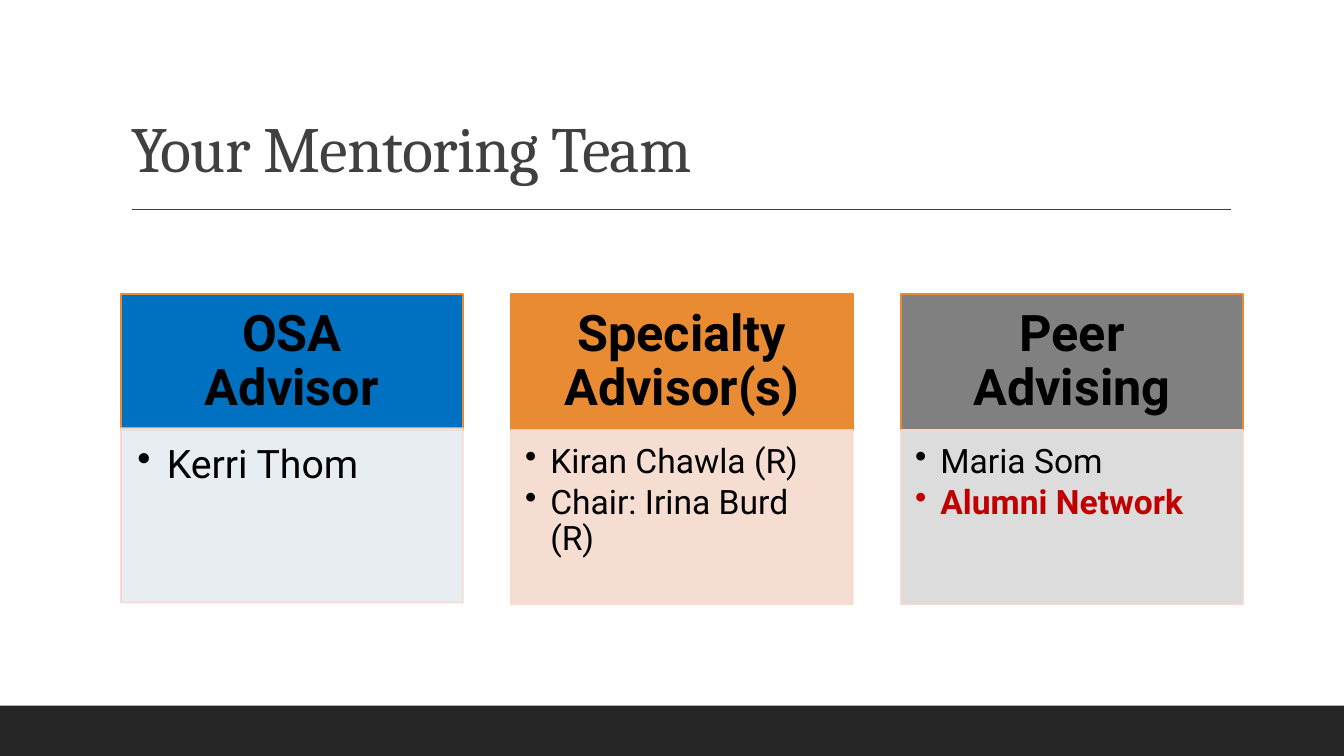
from dataclasses import dataclass

from lxml import etree
from pptx import Presentation
from pptx.dml.color import RGBColor
from pptx.enum import shapes, text
from pptx.oxml import ns
from pptx.util import Pt


@dataclass(frozen=True)
class Theme:
    title_font: str = "Cambria"
    body_font: str = "Roboto"
    title_size: float = 46
    heading_size: float = 36
    ink: str = "000000"
    title_ink: str = "404040"
    accent: str = "C00000"
    footer: str = "262626"
    orange: str = "E88B33"
    blue: str = "0070C0"
    grey: str = "808080"
    pale_orange: str = "F6DACE"
    pale_blue: str = "E5ECF0"
    pale_grey: str = "D9D9D9"


class SlideBuilder:
    def __init__(self, page, theme):
        self.page = page
        self.theme = theme

    def style(self, span, font, size, color, bold=False):
        span.font.name = font
        span.font.size = Pt(size)
        span.font.bold = bold
        span.font.color.rgb = RGBColor.from_string(color)

    def title(self, wording, left, top, width, height):
        box = self.page.shapes.title
        box.left, box.top, box.width, box.height = map(Pt, (left, top, width, height))
        frame = box.text_frame
        frame.text = wording
        frame.auto_size = text.MSO_AUTO_SIZE.NONE
        frame.vertical_anchor = text.MSO_ANCHOR.BOTTOM
        para = frame.paragraphs[0]
        para.alignment = text.PP_ALIGN.LEFT
        para.line_spacing = 0.9
        span = para.runs[0]
        self.style(span, self.theme.title_font, self.theme.title_size, self.theme.title_ink)
        span.font._element.set("spc", "-50")

    def rule(self, left, top, right):
        line = self.page.shapes.add_connector(
            shapes.MSO_CONNECTOR.STRAIGHT, Pt(left), Pt(top), Pt(right), Pt(top))
        line.line.color.rgb = RGBColor.from_string(self.theme.title_ink)
        line.line.width = Pt(1)
        etree.SubElement(line._element.spPr, ns.qn("a:effectLst"))

    def block(self, left, top, width, height, fill, border=None, opacity=100):
        box = self.page.shapes.add_shape(
            shapes.MSO_SHAPE.RECTANGLE, Pt(left), Pt(top), Pt(width), Pt(height))
        box.shadow.inherit = False
        box.fill.solid()
        box.fill.fore_color.rgb = RGBColor.from_string(fill)
        if border:
            box.line.color.rgb = RGBColor.from_string(border)
            box.line.width = Pt(1.25)
        else:
            box.line.fill.background()
        if opacity < 100:
            for color in box._element.spPr.iter(ns.qn("a:srgbClr")):
                etree.SubElement(color, ns.qn("a:alpha"), val=str(opacity * 1000))
        return box

    def frame(self, box, anchor, insets):
        frame = box.text_frame
        frame.word_wrap = True
        frame.vertical_anchor = anchor
        (frame.margin_left, frame.margin_top,
         frame.margin_right, frame.margin_bottom) = map(Pt, insets)
        return frame

    def heading(self, wording, left, top, width, height, fill):
        box = self.block(left, top, width, height, fill, self.theme.orange)
        frame = self.frame(box, text.MSO_ANCHOR.MIDDLE, (20, 11.5, 20, 11.5))
        frame.text = wording
        para = frame.paragraphs[0]
        para.alignment = text.PP_ALIGN.CENTER
        para.line_spacing = 0.9
        self.style(para.runs[0], self.theme.body_font, self.theme.heading_size,
                   self.theme.ink, bold=True)

    def people(self, names, left, top, width, height, fill, size, highlight):
        box = self.block(left, top, width, height, fill, self.theme.pale_orange, opacity=90)
        # Insets and indent grow with the type size
        insets = [size * share for share in (0.42, 0.42, 0.57, 0.63)]
        frame = self.frame(box, text.MSO_ANCHOR.TOP, insets)
        frame.text = "\n".join(names)
        indent = Pt(size * 0.75)
        for para in frame.paragraphs:
            properties = para._element.get_or_add_pPr()
            properties.set("marL", str(indent))
            properties.set("indent", str(-indent))
            etree.SubElement(properties, ns.qn("a:buChar"), char="•")
            para.alignment = text.PP_ALIGN.LEFT
            para.line_spacing = 0.9
            para.space_after = Pt(size * 0.15)
            marked = para.text == highlight
            color = self.theme.accent if marked else self.theme.ink
            self.style(para.runs[0], self.theme.body_font, size, color, bold=marked)


def main():
    theme = Theme()
    deck = Presentation()
    deck.slide_width, deck.slide_height = Pt(960), Pt(540)
    builder = SlideBuilder(deck.slides.add_slide(deck.slide_layouts[5]), theme)

    # Footer band, title and rule
    builder.block(0, 504, 960, 36, theme.footer)
    builder.rule(94.3, 149.5, 879)
    builder.title("Your Mentoring Team", 86.4, 22.5, 792, 114.2)

    # Three advisor cards: heading, colours, list top, type size, names
    cards = [
        ("OSA Advisor", theme.blue, theme.pale_blue, 306, 28, ["Kerri Thom"]),
        ("Specialty Advisor(s)", theme.orange, theme.pale_orange, 307.2, 24,
         ["Kiran Chawla (R)", "Chair: Irina Burd (R)"]),
        ("Peer Advising", theme.grey, theme.pale_grey, 307.2, 24,
         ["Maria Som", "Alumni Network"]),
    ]
    card_width, pitch = 244.2, 278.6
    for column, (heading, strong, pale, list_top, size, names) in enumerate(cards):
        left = 86.4 + column * pitch
        builder.heading(heading, left, 210, card_width, 97.2, strong)
        builder.people(names, left, list_top, card_width, 124.5, pale, size,
                       highlight="Alumni Network")

    deck.save("out.pptx")


if __name__ == "__main__":
    main()
